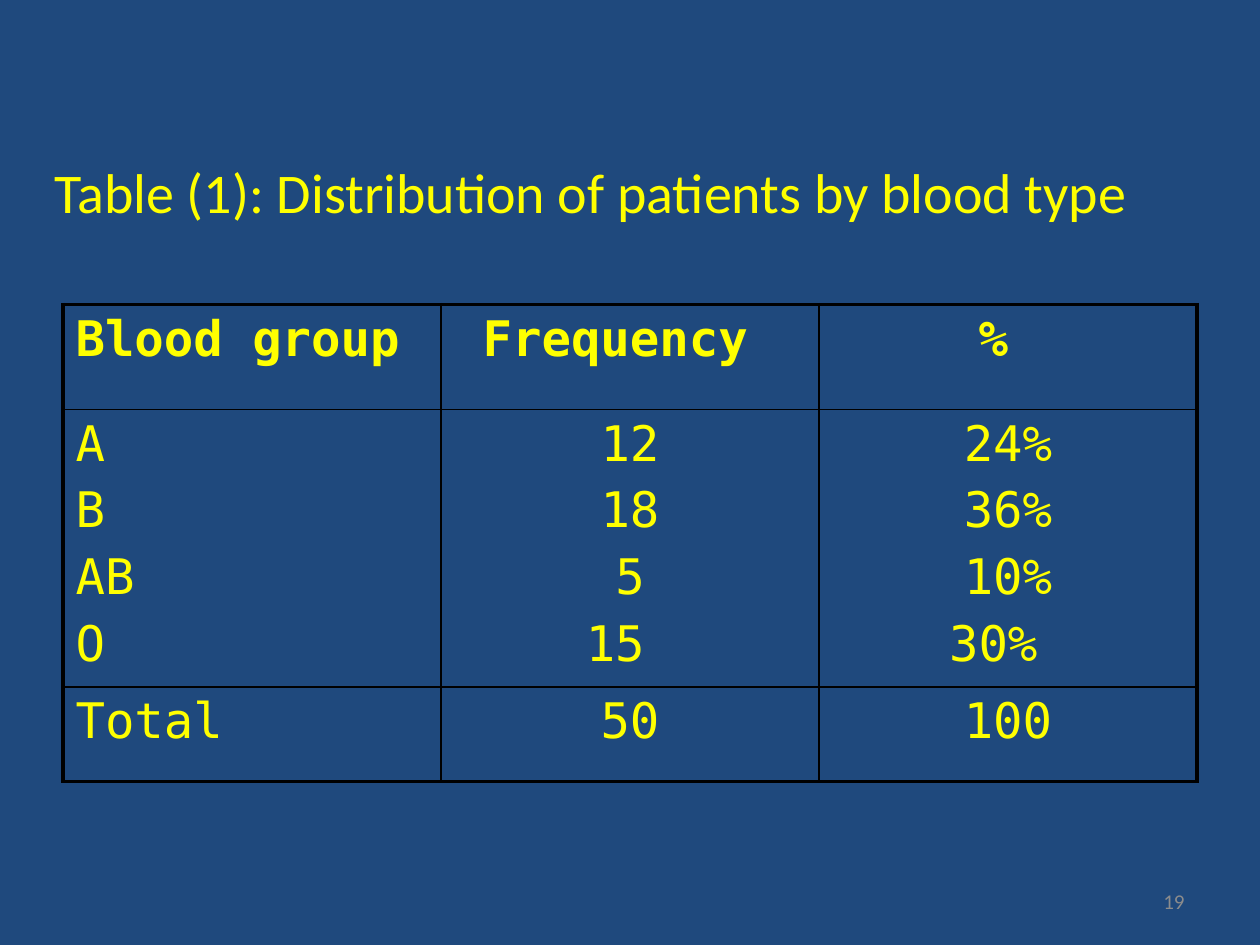
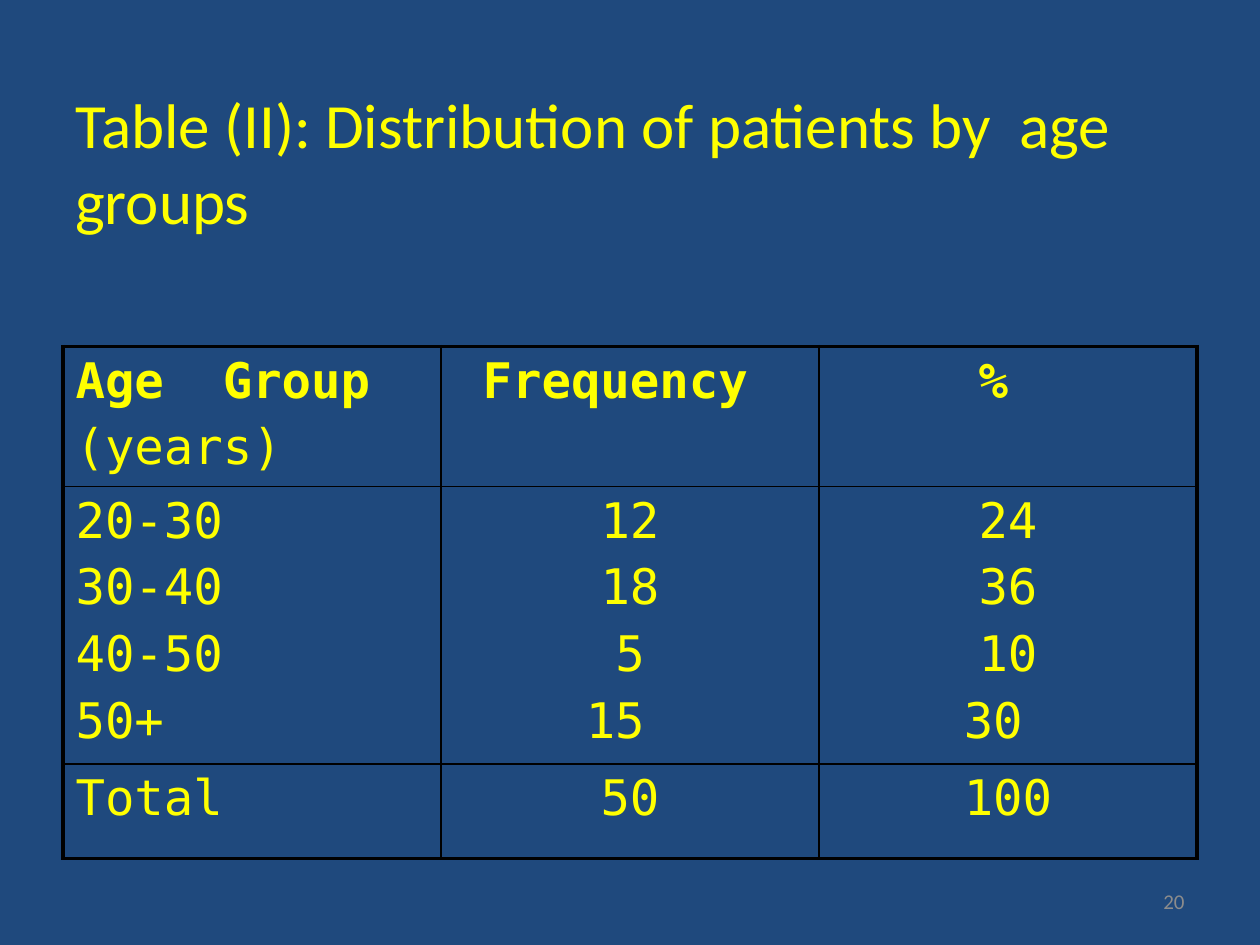
from lxml.etree import SubElement
from pptx import Presentation
from pptx.dml.color import RGBColor
from pptx.enum.text import MSO_ANCHOR, PP_ALIGN
from pptx.oxml.ns import qn
from pptx.util import Pt

COLORS = {"background": "1F497D", "text": "FFFF00", "border": "000000", "number": "8C8C8C"}
TITLE_FONT = "Calibri"
TABLE_FONT = "DejaVu Sans Mono"
COLUMN_WIDTH = 216
OUTER_LINE, INNER_LINE = 2.25, 1

FREQUENCIES = ["12", "18", "5", "15 "]
TOTALS = [["Total"], ["50"], ["100"]]


def style_paragraph(paragraph, font_name, size, color, align=PP_ALIGN.LEFT, bold=False):
    paragraph.alignment = align
    font = paragraph.font
    font.name, font.size, font.bold = font_name, Pt(size), bold
    font.color.rgb = RGBColor.from_string(COLORS[color])


def add_label(slide, text, box, size, color, align=PP_ALIGN.LEFT):
    frame = slide.shapes.add_textbox(*map(Pt, box)).text_frame
    frame.word_wrap = True
    frame.vertical_anchor = MSO_ANCHOR.MIDDLE
    frame.text = text
    style_paragraph(frame.paragraphs[0], TITLE_FONT, size, color, align)
    return frame


def add_title(slide, text, box, size):
    """Add a title that keeps one free line below its text."""
    frame = add_label(slide, text, box, size, "text")
    frame.margin_bottom = Pt(3.6 + 1.22 * size)


def add_slide_number(slide, number):
    add_label(slide, str(number), (516, 500.4, 168, 28.8), 12, "number", PP_ALIGN.RIGHT)


def set_borders(cell, outer_sides):
    properties = cell._tc.get_or_add_tcPr()
    for side in "LRTB":
        width = OUTER_LINE if side in outer_sides else INNER_LINE
        line = SubElement(properties, qn(f"a:ln{side}"), w=str(Pt(width)))
        fill = SubElement(line, qn("a:solidFill"))
        SubElement(fill, qn("a:srgbClr"), val=COLORS["border"])


def fill_cell(cell, lines, align, is_header):
    cell.margin_left = cell.margin_right = Pt(7.2)
    cell.margin_top = cell.margin_bottom = Pt(3.6)
    cell.text = "\n".join(lines)
    for index, paragraph in enumerate(cell.text_frame.paragraphs):
        style_paragraph(paragraph, TABLE_FONT, 28, "text", align, is_header and index == 0)
        if index:
            paragraph.space_before = Pt(5.6)


def add_frequency_table(slide, top, header_height, rows):
    """Add a ruled table; each cell is a list of lines."""
    heights = [header_height, 154, 54]
    last_row, last_column = len(rows) - 1, len(rows[0]) - 1
    table = slide.shapes.add_table(
        len(rows), len(rows[0]), Pt(36), Pt(top),
        Pt(COLUMN_WIDTH * len(rows[0])), Pt(sum(heights))).table
    table.first_row = table.horz_banding = False
    for row, height in zip(table.rows, heights):
        row.height = Pt(height)
    for r, row in enumerate(rows):
        for c, lines in enumerate(row):
            cell = table.cell(r, c)
            align = PP_ALIGN.CENTER if c else PP_ALIGN.LEFT
            fill_cell(cell, lines, align, is_header=r == 0)
            edges = {"L": c == 0, "R": c == last_column, "T": r == 0, "B": r == last_row}
            set_borders(cell, [side for side, is_outer in edges.items() if is_outer])
            cell.fill.background()


def add_distribution_slide(prs, number, title, title_box, title_size,
                           top, header_height, group_header, groups, percentages):
    slide = prs.slides.add_slide(prs.slide_layouts[6])
    add_title(slide, title, title_box, title_size)
    rows = [[group_header, ["Frequency "], ["% "]], [groups, FREQUENCIES, percentages], TOTALS]
    add_frequency_table(slide, top, header_height, rows)
    add_slide_number(slide, number)


def main():
    prs = Presentation()
    prs.slide_width, prs.slide_height = Pt(720), Pt(540)
    background = prs.slide_master.background.fill
    background.solid()
    background.fore_color.rgb = RGBColor.from_string(COLORS["background"])

    add_distribution_slide(
        prs, 19, "Table (1): Distribution of patients by blood type", (24, 84, 648, 90), 32,
        top=174, header_height=60, group_header=["Blood group"],
        groups=["A", "B", "AB", "O"], percentages=["24%", "36%", "10%", "30% "])
    add_distribution_slide(
        prs, 20, "Table (II): Distribution of patients by  age groups", (36, 60, 648, 108), 36,
        top=198, header_height=78, group_header=["Age  Group", "(years)"],
        groups=["20-30", "30-40", "40-50", "50+"], percentages=["24", "36", "10", "30 "])
    prs.save("out.pptx")


if __name__ == "__main__":
    main()
